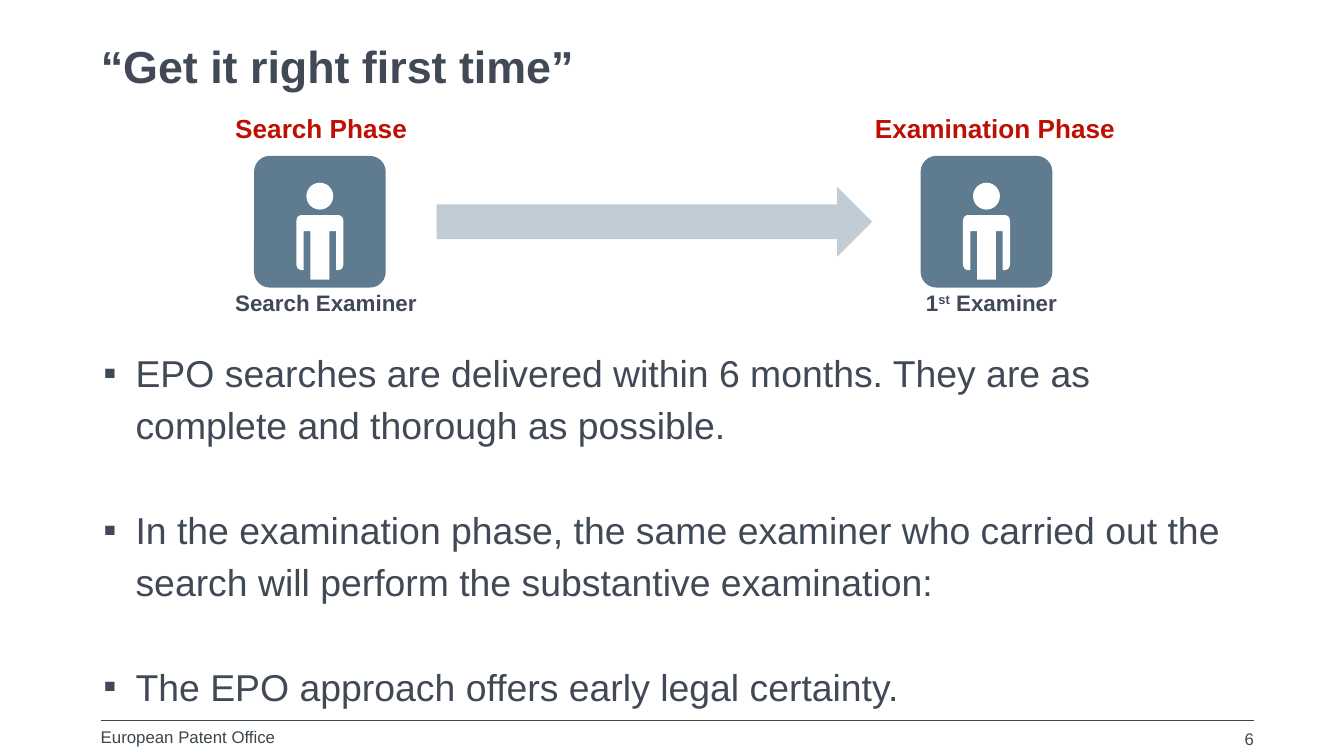
"""Builds the slide on searching and examining with one examiner."""
from dataclasses import dataclass

from lxml.etree import SubElement as Sub
from pptx import Presentation as Deck
from pptx.dml.color import RGBColor as Rgb
from pptx.enum.shapes import MSO_CONNECTOR as Link, MSO_SHAPE as Form
from pptx.enum.text import MSO_ANCHOR as Anchor, PP_ALIGN as Align
from pptx.oxml.ns import qn
from pptx.util import Inches, Pt

INK = {"text": "404955", "rule": "3B464D", "red": "BE0F05",
       "tile": "5F7B8F", "arrow": "C1CCD5", "white": "FFFFFF"}
WIDE = Inches(10)
SIZE = {"slide_width": WIDE, "slide_height": WIDE * 9 // 16}
FONT = {"name": "Arial", "bold": False}
FRAME = {"margin_left": 0, "margin_right": 0, "margin_top": 0,
         "margin_bottom": 0, "vertical_anchor": Anchor.TOP}
LIST = {"line_spacing": Pt(28), "alignment": Align.LEFT}


@dataclass
class Label:
    """A line of text whose runs alternate between plain and raised."""
    runs: tuple[str, ...]
    box: tuple[float, float, float, float]
    size: int
    ink: str = "text"
    bold: bool = True
    align: Align = Align.LEFT
    wrap: bool = False


@dataclass
class Person:
    """The corner of a tile that holds a figure."""
    left: float
    top: float


LABELS = [
    Label(("“Get it right first time”",), (0.75, 0.29, 8.58, 0.57), 24),
    Label(("Search Phase",), (1.75, 0.84, 1.28, 0.24), 14, "red"),
    Label(("Examination Phase",), (6.51, 0.84, 1.8, 0.24), 14, "red"),
    Label(("Search Examiner",), (1.75, 2.15, 1.36, 0.2), 12),
    Label(("1", "st", " Examiner"), (6.89, 2.15, 1, 0.2), 12),
    Label(("European Patent Office",), (0.75, 5.41, 1.7, 0.19), 9, "rule", False),
    Label(("6",), (7, 5.42, 2.33, 0.18), 9, "text", False, Align.RIGHT, True),
]
PEOPLE = [Person(1.89, 1.16), Person(6.85, 1.16)]
POINTS = [
    "EPO searches are delivered within 6 months. They are as complete and "
    "thorough as possible.",
    "In the examination phase, the same examiner who carried out the search "
    "will perform the substantive examination:",
    "The EPO approach offers early legal certainty.",
]


def apply(obj, vals: dict) -> None:
    """Set each named value on an object."""
    for key, val in vals.items():
        setattr(obj, key, val)


def style(font, size: float, ink: str, bold: bool = False) -> None:
    """Format a font."""
    apply(font, FONT | {"size": Pt(size), "bold": bold})
    font.color.rgb = Rgb.from_string(INK[ink])


def paint(shape, ink: str) -> None:
    """Give a shape a flat fill with no line or shadow."""
    shape.shadow.inherit = False
    shape.fill.solid()
    shape.fill.fore_color.rgb = Rgb.from_string(INK[ink])
    shape.line.fill.background()


def block(shapes, form: Form, box: tuple, ink: str):
    """Draw a preset shape."""
    shape = shapes.add_shape(form, *map(Inches, box))
    paint(shape, ink)
    return shape


def write(shapes, label: Label) -> None:
    """Place a label."""
    frame = shapes.add_textbox(*map(Inches, label.box)).text_frame
    apply(frame, FRAME | {"word_wrap": label.wrap})
    para = frame.paragraphs[0]
    para.alignment = label.align
    for num, text in enumerate(label.runs):
        run = para.add_run()
        run.text = text
        style(run.font, label.size, label.ink, label.bold)
        if num % 2:
            run.font._element.set("baseline", "30000")


def bend(start: tuple, turn: tuple, end: tuple) -> list:
    """Sample a round corner."""
    steps = [num / 6 for num in range(7)]
    return [tuple((1 - t) ** 2 * a + 2 * t * (1 - t) * b + t * t * c
                  for a, b, c in zip(start, turn, end)) for t in steps]


def draw(shapes, man: Person) -> None:
    """Draw a tile with a standing figure as a group."""
    parts = shapes.add_group_shape().shapes
    tile = block(parts, Form.ROUNDED_RECTANGLE,
                 (man.left, man.top, 0.98, 0.98), "tile")
    tile.adjustments[0] = 0.12
    half = [*bend((0.13, 0), (0.175, 0), (0.175, 0.05)),
            *bend((0.175, 0.36), (0.175, 0.41), (0.13, 0.41)),
            (0.12, 0.41), (0.12, 0.12), (0.07, 0.12), (0.07, 0.48)]
    trace = half + [(-x, y) for x, y in reversed(half)]
    mid, neck = man.left + 0.49, man.top + 0.44
    spots = [(Inches(mid + x), Inches(neck + y)) for x, y in trace]
    pen = parts.build_freeform(*spots[0])
    pen.add_line_segments(spots[1:], close=True)
    paint(pen.convert_to_shape(), "white")
    block(parts, Form.OVAL, (mid - 0.1, man.top + 0.2, 0.2, 0.2), "white")


def bullets(shapes, items: list[str]) -> None:
    """Write the bullet list."""
    box = shapes.add_textbox(*map(Inches, (0.67, 2.5, 8.58, 2.05)))
    frame = box.text_frame
    frame.word_wrap = True
    for num, text in enumerate(items):
        para = frame.add_paragraph() if num else frame.paragraphs[0]
        apply(para, LIST)
        if num:
            para.space_before = Pt(28)
        props = para._p.get_or_add_pPr()
        props.set("marL", str(Inches(0.24)))
        props.set("indent", str(Inches(-0.24)))
        Sub(props, qn("a:buFont")).set("typeface", "Arial")
        Sub(props, qn("a:buChar")).set("char", "▪")
        run = para.add_run()
        run.text = text
        style(run.font, 20, "text")


def rule(shapes) -> None:
    """Draw the line above the footer."""
    ends = map(Inches, (0.75, 5.36, 9.33, 5.36))
    line = shapes.add_connector(Link.STRAIGHT, *ends)
    line.line.width = Pt(0.75)
    line.line.color.rgb = Rgb.from_string(INK["rule"])
    Sub(line._element.spPr, qn("a:effectLst"))


def main() -> None:
    """Build and save the deck."""
    deck = Deck()
    apply(deck, SIZE)
    shapes = deck.slides.add_slide(deck.slide_layouts[6]).shapes
    rule(shapes)
    for man in PEOPLE:
        draw(shapes, man)
    block(shapes, Form.RIGHT_ARROW, (3.25, 1.39, 3.24, 0.52), "arrow")
    bullets(shapes, POINTS)
    for label in LABELS:
        write(shapes, label)
    deck.save("out.pptx")


if __name__ == "__main__":
    main()
